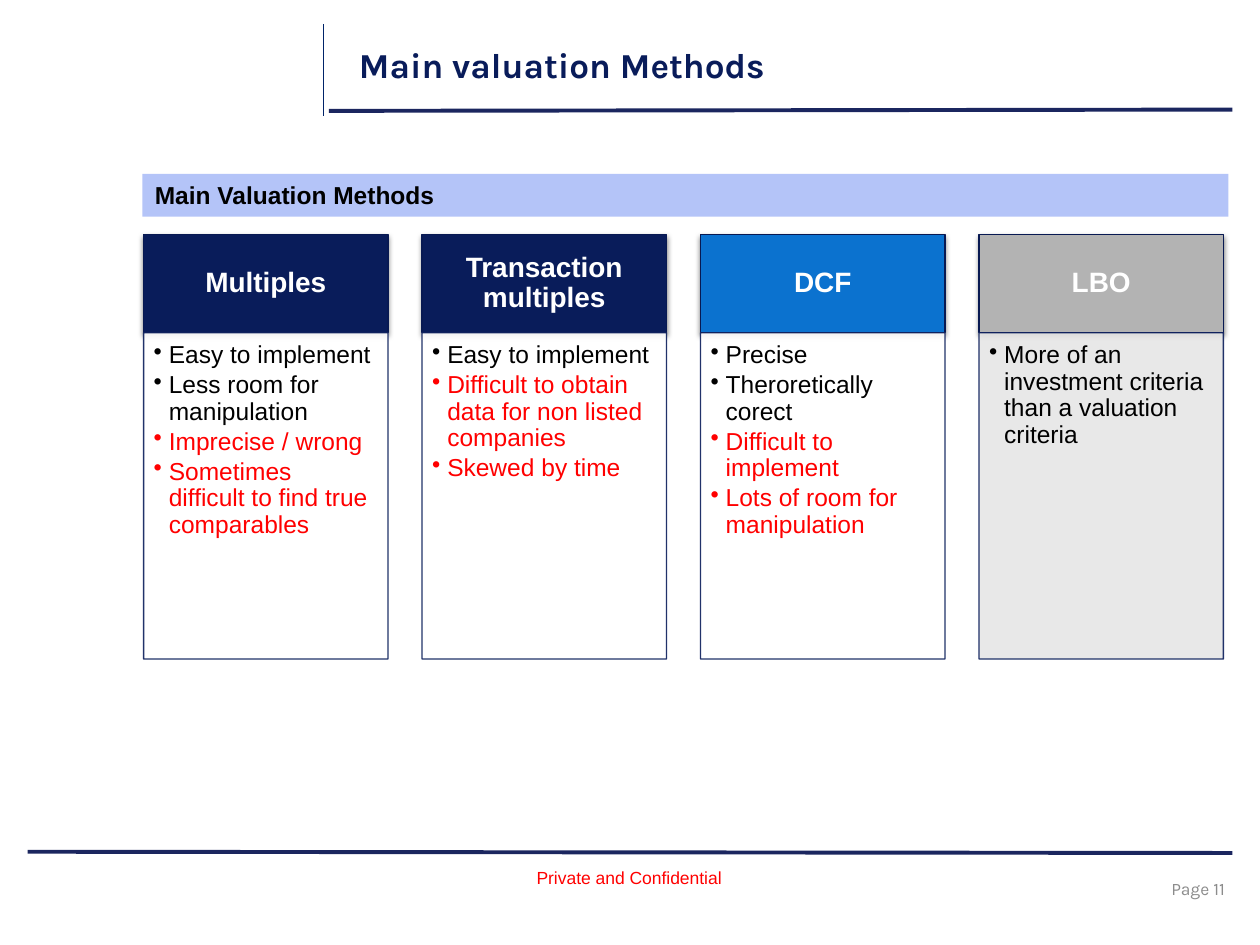
from lxml import etree
from pptx import Presentation
from pptx.dml.color import RGBColor
from pptx.enum.shapes import MSO_CONNECTOR, MSO_SHAPE
from pptx.enum.text import MSO_ANCHOR, PP_ALIGN
from pptx.oxml import parse_xml
from pptx.oxml.ns import nsdecls, qn
from pptx.util import Inches, Pt

STRAIGHT = MSO_CONNECTOR.STRAIGHT
RECTANGLE = MSO_SHAPE.RECTANGLE
TOP, MIDDLE = MSO_ANCHOR.TOP, MSO_ANCHOR.MIDDLE
LEFT, CENTER, RIGHT = PP_ALIGN.LEFT, PP_ALIGN.CENTER, PP_ALIGN.RIGHT

COLORS = {
    "navy": "091C5A", "rule": "1B265F", "divider": "002368", "border": "081952",
    "banner": "B4C4F8", "blue": "0B72CF", "gray": "B3B3B3", "pale": "E6E6E6",
    "white": "FFFFFF", "black": "000000", "red": "FF0000", "page": "8C8C8C",
}

prs = Presentation()
prs.slide_width, prs.slide_height = Inches(10), Inches(7.5)
slide = prs.slides.add_slide(prs.slide_layouts[6])


def add_area(box, insets=(0.1, 0.05, 0.1, 0.05), anchor=TOP, fill=None, line=None):
    place = [Inches(v) for v in box]
    if fill:
        area = slide.shapes.add_shape(RECTANGLE, *place)
        area.shadow.inherit = False
        area.fill.solid()
        area.fill.fore_color.rgb = RGBColor.from_string(COLORS[fill])
        if line:
            area.line.color.rgb = RGBColor.from_string(COLORS[line])
            area.line.width = Pt(0.75)
        else:
            area.line.fill.background()
    else:
        area = slide.shapes.add_textbox(*place)
    frame = area.text_frame
    frame.word_wrap = True
    frame.vertical_anchor = anchor
    frame.margin_left, frame.margin_top, frame.margin_right, frame.margin_bottom = (
        Inches(v) for v in insets)
    return area


def write(paragraph, text, size, color, font="Arial", bold=False, align=LEFT):
    paragraph.alignment = align
    run = paragraph.add_run()
    run.text = text
    run.font.name = font
    run.font.size = Pt(size)
    run.font.bold = bold
    run.font.color.rgb = RGBColor.from_string(COLORS[color])


for x1, y1, x2, y2, color, width in [
    (0.22, 6.76, 9.78, 6.77, "rule", 2.25),
    (2.61, 0.88, 9.78, 0.87, "rule", 2.25),
    (2.57, 0.19, 2.57, 0.86, "divider", 0.75),
    (2.57, 0.25, 2.57, 0.92, "divider", 0.75),
]:
    rule = slide.shapes.add_connector(
        STRAIGHT, Inches(x1), Inches(y1), Inches(x2), Inches(y2))
    rule.line.color.rgb = RGBColor.from_string(COLORS[color])
    rule.line.width = Pt(width)
    etree.SubElement(rule._element.spPr, qn("a:effectLst"))

page = add_area((7.49, 6.85, 2.33, 0.4), anchor=MIDDLE)
write(page.text_frame.paragraphs[0], "Page 11", 10, "page", "Karla", align=RIGHT)

notice = add_area((4.16, 6.83, 1.68, 0.27))
notice.text_frame.word_wrap = False
write(notice.text_frame.paragraphs[0], "Private and Confidential", 10, "red")

title = add_area((2.75, 0.3, 6.75, 0.53))
write(title.text_frame.paragraphs[0], "Main valuation Methods", 20, "navy", "Karla", True)

banner = add_area((1.13, 1.38, 8.62, 0.34), fill="banner")
write(banner.text_frame.paragraphs[0], "Main Valuation Methods", 14, "black", bold=True)

methods = [
    ("Multiples", "navy", "white",
     ["Easy to implement", "Less room for manipulation"],
     ["Imprecise / wrong", "Sometimes difficult to find true comparables"]),
    ("Transaction multiples", "navy", "white",
     ["Easy to implement"],
     ["Difficult to obtain data for non listed companies", "Skewed by time"]),
    ("DCF", "blue", "white",
     ["Precise", "Theroretically corect"],
     ["Difficult to implement", "Lots of room for manipulation"]),
    ("LBO", "gray", "pale",
     ["More of an investment criteria than a valuation criteria"], []),
]
for column, (method, head_fill, body_fill, strengths, weaknesses) in enumerate(methods):
    left = 1.14 + 2.21 * column

    head = add_area((left, 1.86, 1.94, 0.78), (0.12, 0.07, 0.12, 0.07), MIDDLE,
                    head_fill, "border")
    effects = head._element.spPr.find(qn("a:effectLst"))
    effects.append(parse_xml(
        f'<a:outerShdw {nsdecls("a")} blurRad="{Pt(3)}" dist="{Pt(2)}" dir="5400000" '
        f'rotWithShape="0"><a:srgbClr val="{COLORS["black"]}">'
        '<a:alpha val="50000"/></a:srgbClr></a:outerShdw>'))
    heading = head.text_frame.paragraphs[0]
    heading.line_spacing = 0.9
    write(heading, method, 16, "white", bold=True, align=CENTER)

    body = add_area((left, 2.64, 1.94, 2.59), (0.08, 0.08, 0.11, 0.12), TOP,
                    body_fill, "navy")
    for color in body._element.spPr.iter(qn("a:srgbClr")):
        etree.SubElement(color, qn("a:alpha")).set("val", "90000")
    points = [(s, "black") for s in strengths] + [(w, "red") for w in weaknesses]
    for index, (point, color) in enumerate(points):
        frame = body.text_frame
        paragraph = frame.add_paragraph() if index else frame.paragraphs[0]
        props = paragraph._p.get_or_add_pPr()
        props.set("marL", str(Inches(0.12)))
        props.set("indent", str(-Inches(0.12)))
        etree.SubElement(props, qn("a:buChar")).set("char", "•")
        paragraph.line_spacing = 0.9
        paragraph.space_after = Pt(2)
        write(paragraph, point, 14, color)

prs.save("out.pptx")
